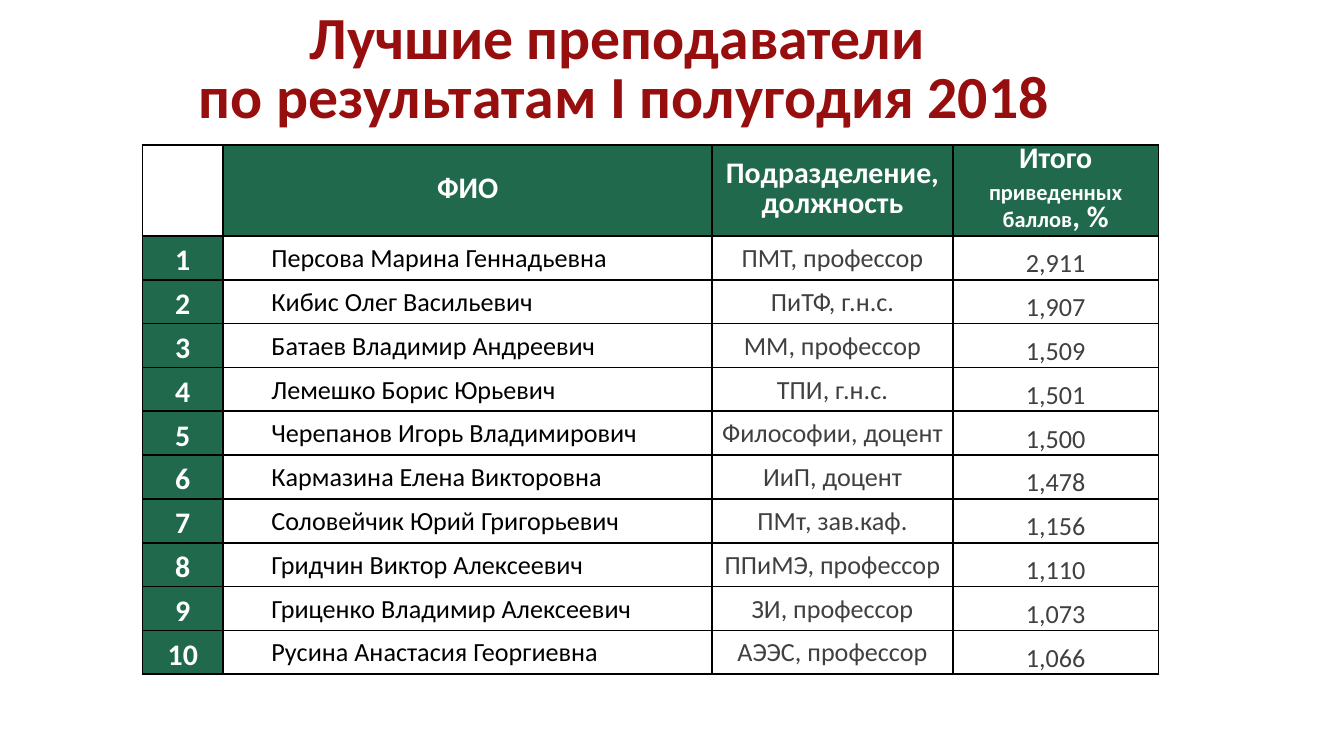
from lxml import etree
from pptx import Presentation
from pptx.dml.color import RGBColor
from pptx.enum.text import MSO_ANCHOR, PP_ALIGN
from pptx.oxml.ns import qn
from pptx.util import Inches, Pt

CENTER, LEFT = PP_ALIGN.CENTER, PP_ALIGN.LEFT
MIDDLE, BOTTOM = MSO_ANCHOR.MIDDLE, MSO_ANCHOR.BOTTOM

RED = RGBColor(0x96, 0x0E, 0x0E)
GREEN = RGBColor(0x20, 0x69, 0x4C)
WHITE = RGBColor(0xFF, 0xFF, 0xFF)
BLACK = RGBColor(0x00, 0x00, 0x00)
GRAY = RGBColor(0x40, 0x40, 0x40)

SLIDE_WIDTH = 10
COLUMN_WIDTHS = [0.6, 3.64, 1.79, 1.53]
HEADER_HEIGHT, BODY_HEIGHT = 0.6, 3.26

HEADERS = [
    [],
    [("ФИО", 16)],
    [("Подразделение, должность", 16)],
    [("Итого ", 16), ("приведенных баллов", 12), (", %", 16)],
]
TEACHERS = [
    ("Персова Марина Геннадьевна", "ПМТ, профессор", "2,911"),
    ("Кибис Олег Васильевич", "ПиТФ, г.н.с.", "1,907"),
    ("Батаев Владимир Андреевич", "ММ, профессор", "1,509"),
    ("Лемешко Борис Юрьевич", "ТПИ, г.н.с.", "1,501"),
    ("Черепанов Игорь Владимирович", "Философии, доцент", "1,500"),
    ("Кармазина Елена Викторовна", "ИиП, доцент", "1,478"),
    ("Соловейчик Юрий Григорьевич", "ПМт, зав.каф.", "1,156"),
    ("Гридчин Виктор Алексеевич", "ППиМЭ, профессор", "1,110"),
    ("Гриценко Владимир Алексеевич", "ЗИ, профессор", "1,073"),
    ("Русина Анастасия Георгиевна", "АЭЭС, профессор", "1,066"),
]


class SlideBuilder:
    font = "Calibri"

    def __init__(self, slide):
        self.slide = slide

    def style_run(self, run, size, color, bold):
        run.font.name = self.font
        run.font.size = Pt(size)
        run.font.color.rgb = color
        run.font.bold = bold

    def title(self, text, left, top, width, height):
        box = self.slide.shapes.add_textbox(
            Inches(left), Inches(top), Inches(width), Inches(height))
        frame = box.text_frame
        frame.word_wrap = True
        frame.vertical_anchor = MIDDLE
        paragraph = frame.paragraphs[0]
        paragraph.text = text
        paragraph.alignment = CENTER
        paragraph.line_spacing = Pt(32)
        paragraph.space_after = Pt(12)
        for run in paragraph.runs:
            self.style_run(run, 32, RED, True)

    def table(self, left, top, widths, heights):
        table = self.slide.shapes.add_table(
            len(heights), len(widths), Inches(left), Inches(top),
            Inches(sum(widths)), Inches(sum(heights))).table
        table.first_row = table.horz_banding = False
        for column, width in zip(table.columns, widths):
            column.width = Inches(width)
        for row, height in zip(table.rows, heights):
            row.height = Inches(height)
        for cell in table.iter_cells():
            self.borders(cell)
            cell.fill.background()
        return table

    def borders(self, cell):
        properties = cell._tc.get_or_add_tcPr()
        for side in ("a:lnL", "a:lnR", "a:lnT", "a:lnB"):
            line = etree.SubElement(properties, qn(side), w=str(Pt(1)))
            fill = etree.SubElement(line, qn("a:solidFill"))
            etree.SubElement(fill, qn("a:srgbClr"), val=str(BLACK))

    def cell(self, cell, runs, color, bold=False, fill=None, alignment=CENTER,
             anchor=MIDDLE, margins=(0.01, 0.01), indent=0):
        """Fill a cell with (text, size) runs; margins are side and top."""
        if fill is not None:
            cell.fill.solid()
            cell.fill.fore_color.rgb = fill
        side, top = margins
        cell.margin_left = cell.margin_right = Inches(side)
        cell.margin_top, cell.margin_bottom = Inches(top), 0
        cell.vertical_anchor = anchor
        paragraph = cell.text_frame.paragraphs[0]
        paragraph.alignment = alignment
        if indent:
            paragraph._p.get_or_add_pPr().set("marL", str(Inches(indent)))
        for text, size in runs:
            run = paragraph.add_run()
            run.text = text
            self.style_run(run, size, color, bold)
        return paragraph


def main():
    presentation = Presentation()
    presentation.slide_width = Inches(SLIDE_WIDTH)
    presentation.slide_height = Inches(SLIDE_WIDTH * 9 / 16)
    builder = SlideBuilder(
        presentation.slides.add_slide(presentation.slide_layouts[6]))

    builder.title("Лучшие преподаватели \nпо результатам I полугодия 2018",
                  0.43, 0.06, 8.43, 0.94)

    row_height = BODY_HEIGHT / len(TEACHERS)
    table = builder.table(1.06, 1.08, COLUMN_WIDTHS,
                          [HEADER_HEIGHT] + [row_height] * len(TEACHERS))
    for column, runs in enumerate(HEADERS):
        if runs:
            paragraph = builder.cell(table.cell(0, column), runs, WHITE,
                                     bold=True, fill=GREEN)
            paragraph.line_spacing = Pt(16)

    for row, (name, position, score) in enumerate(TEACHERS, start=1):
        number = builder.cell(table.cell(row, 0), [(str(row), 16)], WHITE,
                              bold=True, fill=GREEN, margins=(0.02, 0))
        number.line_spacing = 1.15
        number.space_after = Pt(0.6)
        builder.cell(table.cell(row, 1), [(name, 14)], BLACK,
                     alignment=LEFT, indent=0.35)
        builder.cell(table.cell(row, 2), [(position, 14)], GRAY)
        builder.cell(table.cell(row, 3), [(score, 14)], GRAY, anchor=BOTTOM)

    presentation.save("out.pptx")


if __name__ == "__main__":
    main()
